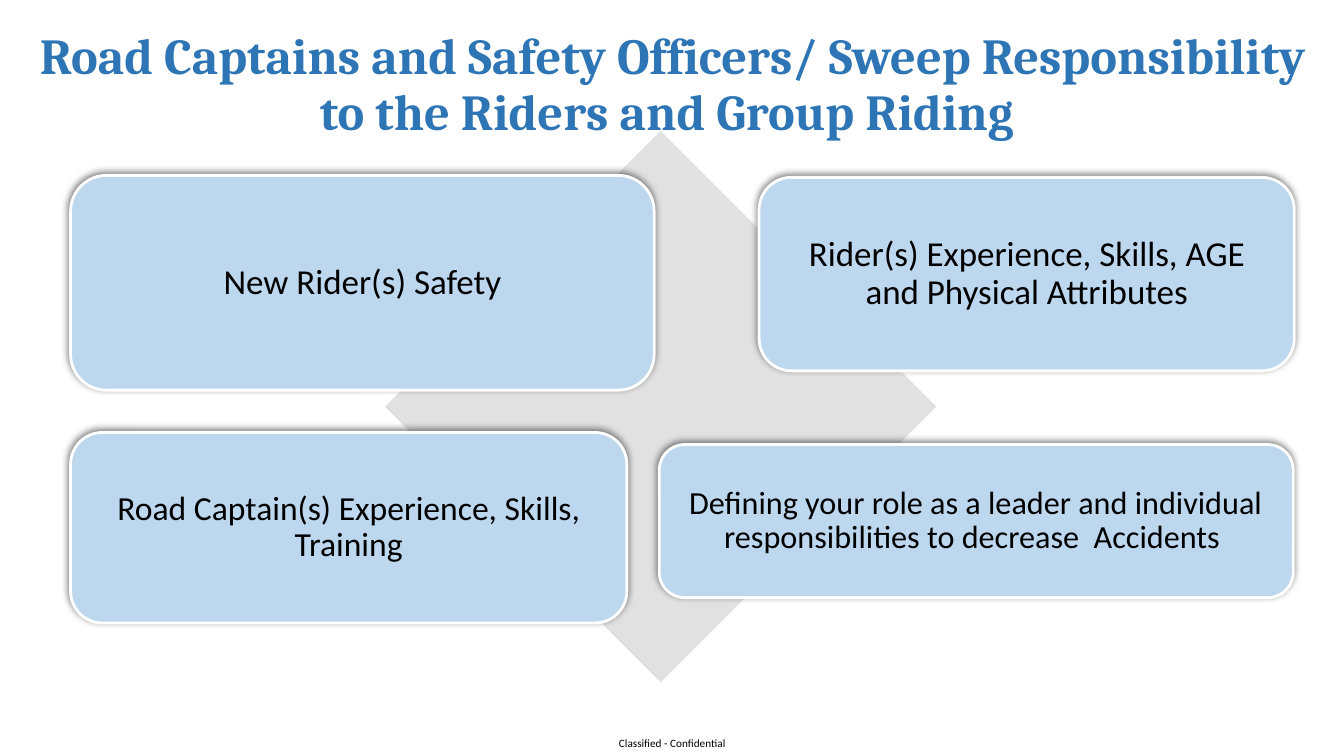
from lxml import etree
from pptx import Presentation
from pptx.dml.color import RGBColor
from pptx.enum import shapes, text
from pptx.oxml.ns import qn
from pptx.util import Pt

CARDS = [
    ("New Rider(s) Safety", 25, (50.4, 125.3, 416.9, 153.4)),
    ("Rider(s) Experience, Skills, AGE and Physical Attributes", 25,
     (542.2, 126.7, 382.3, 138.2)),
    ("Road Captain(s) Experience, Skills, Training", 24,
     (50.4, 308.9, 397.4, 136.1)),
    ("Defining your role as a leader and individual responsibilities "
     "to decrease  Accidents ", 23, (470.9, 317.5, 452.9, 109.4)),
]


def color(value):
    return RGBColor.from_string(value)


def place(shape, bounds):
    for name, length in zip(("left", "top", "width", "height"), bounds):
        setattr(shape, name, Pt(length))


def set_frame(shape, margin, wrap=True):
    frame = shape.text_frame
    values = {"word_wrap": wrap, "auto_size": text.MSO_AUTO_SIZE.NONE,
              "vertical_anchor": text.MSO_ANCHOR.MIDDLE}
    for side in ("left", "top", "right", "bottom"):
        values[f"margin_{side}"] = Pt(margin)
    for name, value in values.items():
        setattr(frame, name, value)
    return frame.paragraphs[0]


def add_span(para, words, shade, **formats):
    span = para.add_run()
    span.text = words
    span.font.color.rgb = color(shade)
    for name, value in formats.items():
        setattr(span.font, name, value)


def add_title(page):
    title = page.shapes.title
    place(title, (7.9, 7.9, 936.7, 104.4))
    para = set_frame(title, 7.2)
    para.alignment = text.PP_ALIGN.CENTER
    para.line_spacing = 0.9
    add_span(para, " ", "2E75B6", name="Cambria", size=Pt(39.6), bold=False)
    add_span(para, "Road Captains and Safety Officers/ Sweep Responsibility "
             "to the Riders and Group Riding", "2E75B6",
             name="Cambria", size=Pt(36), bold=True)


def add_footer(page):
    box = page.shapes.add_textbox(Pt(432), Pt(522), Pt(96.5), Pt(18))
    para = set_frame(box, 0, wrap=False)
    para.alignment = text.PP_ALIGN.CENTER
    add_span(para, "Classified - Confidential", "000000",
             name="Calibri", size=Pt(8))


def add_filled(page, kind, bounds, fill):
    shape = page.shapes.add_shape(kind, *map(Pt, bounds))
    shape.shadow.inherit = False
    shape.fill.solid()
    shape.fill.fore_color.rgb = color(fill)
    shape.line.fill.background()
    return shape


def add_shadow(shape):
    effects = shape._element.spPr.find(qn("a:effectLst"))
    shadow = etree.SubElement(effects, qn("a:outerShdw"), blurRad=str(Pt(5)),
                              dist=str(Pt(2)), dir=str(245 * 60000),
                              rotWithShape="0")
    shade = etree.SubElement(shadow, qn("a:srgbClr"), val="000000")
    etree.SubElement(shade, qn("a:alpha"), val="50000")


def add_card(page, words, size, bounds):
    card = add_filled(page, shapes.MSO_SHAPE.ROUNDED_RECTANGLE, bounds, "BDD7EE")
    card.line.color.rgb = color("FFFFFF")
    card.line.width = Pt(2)
    add_shadow(card)
    para = set_frame(card, 7.2)
    para.alignment = text.PP_ALIGN.CENTER
    para.line_spacing = 0.9
    add_span(para, words, "000000", name="Calibri", size=Pt(size))


def main():
    deck = Presentation()
    deck.slide_width, deck.slide_height = Pt(960), Pt(540)
    page = deck.slides.add_slide(deck.slide_layouts[5])
    add_title(page)
    add_footer(page)
    add_filled(page, shapes.MSO_SHAPE.DIAMOND, (275, 93.6, 393.8, 393.8), "E1E1E1")
    for words, size, bounds in CARDS:
        add_card(page, words, size, bounds)
    deck.save("out.pptx")


if __name__ == "__main__":
    main()
